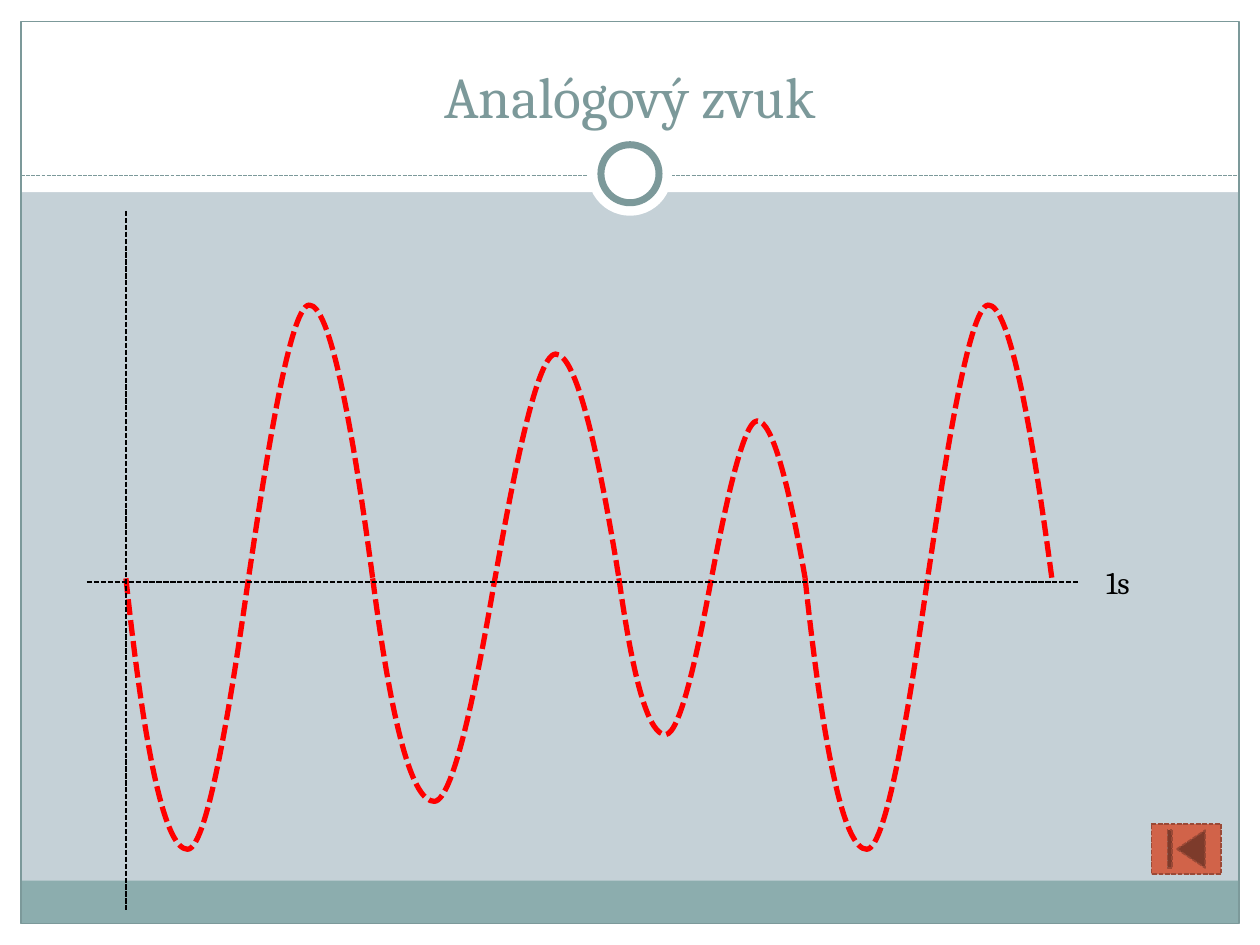
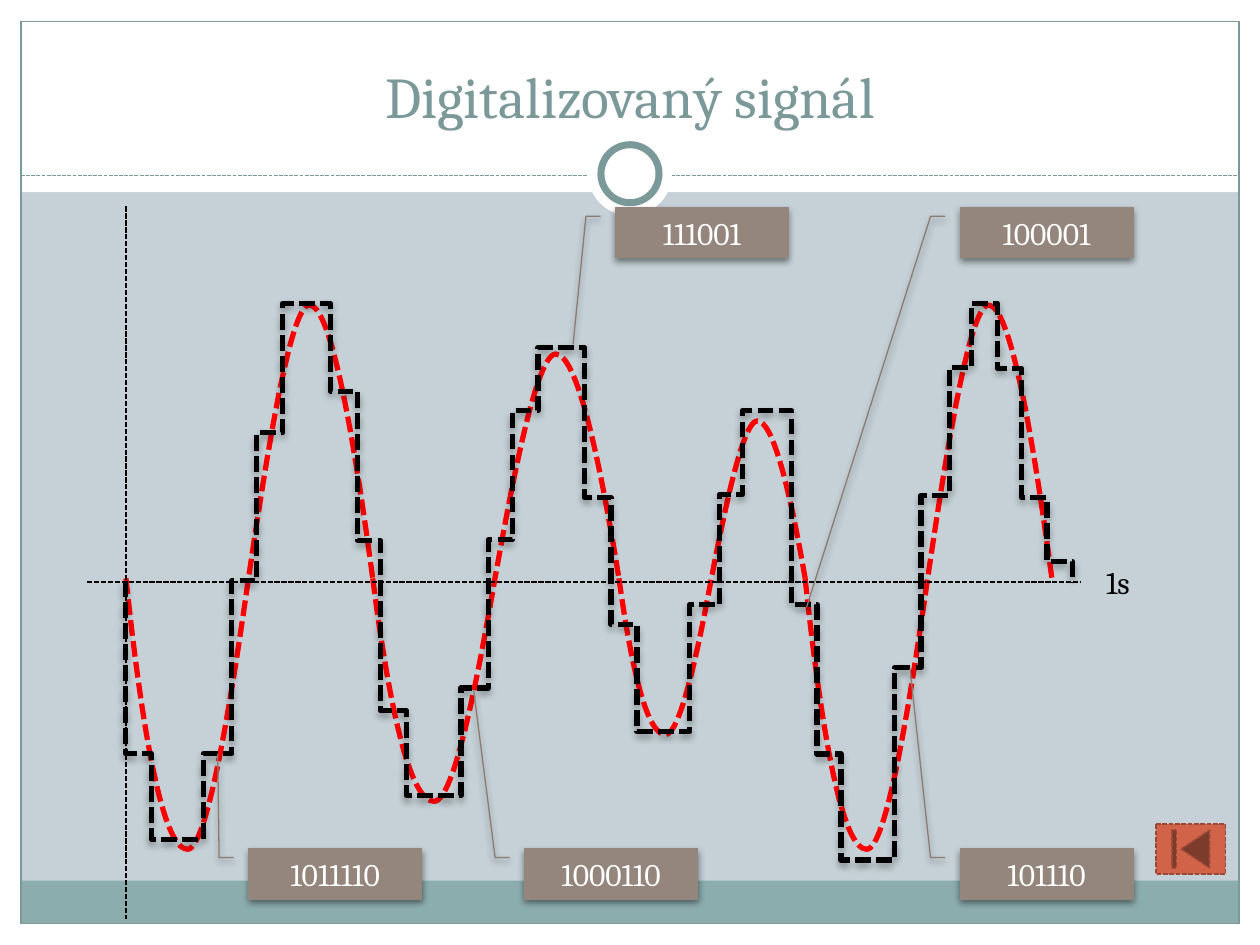
"""Build two slides that compare an analogue sound wave with its digitised signal."""
from lxml.etree import SubElement
from pptx import Presentation
from pptx.dml.color import RGBColor
from pptx.enum.dml import MSO_LINE
from pptx.enum.shapes import MSO_CONNECTOR, MSO_SHAPE
from pptx.enum.text import MSO_ANCHOR, MSO_AUTO_SIZE, PP_ALIGN
from pptx.oxml.ns import qn
from pptx.util import Pt

COLOURS = {
    "backdrop": "C5D1D7", "white": "FFFFFF", "band": "8CADAE", "accent": "7C999A",
    "wave": "FF0000", "black": "000000", "code": "95867D", "leader": "8C7B70",
    "button": "D16349", "button_edge": "9B4936",
}
DASH = MSO_LINE.SQUARE_DOT


def paint(item, fill=None, edge=None, width=0.75, dash=None, shadow=None):
    if hasattr(item, "fill"):
        if fill:
            item.fill.solid()
            item.fill.fore_color.rgb = RGBColor.from_string(COLOURS[fill])
        else:
            item.fill.background()
    if edge:
        item.line.color.rgb = RGBColor.from_string(COLOURS[edge])
        for attribute, value in {"width": Pt(width), "dash_style": dash}.items():
            setattr(item.line, attribute, value)
    else:
        item.line.fill.background()
    properties = item.element.find(qn("p:spPr"))
    effects = SubElement(properties, qn("a:effectLst"))
    if shadow:
        cast = SubElement(effects, qn("a:outerShdw"), blurRad=str(Pt(4)),
                          dist=str(Pt(2)), dir="5400000", rotWithShape="0")
        tint = SubElement(cast, qn("a:srgbClr"), val=COLOURS["black"])
        SubElement(tint, qn("a:alpha"), val=str(shadow * 1000))


def write(frame, words, size, colour, align=PP_ALIGN.CENTER):
    frame.text = words
    paragraph = frame.paragraphs[0]
    paragraph.alignment = align
    font = paragraph.runs[0].font
    font.color.rgb = RGBColor.from_string(COLOURS[colour])
    for attribute, value in {"name": "Cambria", "size": Pt(size)}.items():
        setattr(font, attribute, value)


deck = Presentation()
deck.slide_width, deck.slide_height = Pt(720), Pt(540)
theme = deck.slide_layouts[5]
theme.background.fill.solid()
theme.background.fill.fore_color.rgb = RGBColor.from_string(COLOURS["backdrop"])
heading = theme.placeholders[0]
heading_place = {"left": Pt(24), "top": Pt(18), "width": Pt(672), "height": Pt(60)}
for attribute, value in heading_place.items():
    setattr(heading, attribute, value)
heading.text_frame.vertical_anchor = MSO_ANCHOR.BOTTOM

slides = [deck.slides.add_slide(theme) for _ in range(2)]
drawing = slides[0].shapes
decor = []
for kind, place, look in [
    (MSO_SHAPE.RECTANGLE, (0, 528, 720, 12), {"fill": "white"}),
    (MSO_SHAPE.RECTANGLE, (0, 0, 720, 109.8), {"fill": "white"}),
    (MSO_SHAPE.RECTANGLE, (0, 0, 12, 540), {"fill": "white"}),
    (MSO_SHAPE.RECTANGLE, (708, 0, 12, 540), {"fill": "white"}),
    (MSO_SHAPE.RECTANGLE, (11.75, 503.3, 696, 24.5), {"fill": "band"}),
    (MSO_SHAPE.RECTANGLE, (12, 12.2, 696, 515.5), {"edge": "accent"}),
    (None, (12, 100.5, 708, 100.5), {"edge": "accent", "dash": DASH}),
    (MSO_SHAPE.OVAL, (336, 75.3, 48, 48), {"fill": "white"}),
    (MSO_SHAPE.OVAL, (343.4, 82.7, 33.2, 33.2),
     {"fill": "white", "edge": "accent", "width": 4}),
]:
    corners = [Pt(value) for value in place]
    if kind is None:
        piece = drawing.add_connector(MSO_CONNECTOR.STRAIGHT, *corners)
    else:
        piece = drawing.add_shape(kind, *corners)
    paint(piece, **look)
    decor.append(piece)
for order, piece in enumerate(decor):
    piece.element.xpath(".//p:cNvPr")[0].set("id", str(100 + order))
    theme.shapes.element.insert(2 + order, piece.element)

BASELINE = 330.5
WAVE_FORM = [
    (0.083, 0.71), (0.167, 1), (0.25, 1), (0.333, 1), (0.434, 0.4), (0.495, 0.01),
    (0.553, -0.34), (0.66, -1), (0.743, -1), (0.825, -1), (0.913, -0.59), (1, 0),
]
WAVES = [(72, 141, 154.8, 156.2), (213, 140.7, 127.4, 128.2),
         (353.7, 106.4, 89.3, 90), (460.1, 141, 154.8, 156.2)]
contents = [
    ("Analógový zvuk", (616.3, 120.5, 520), 658),
    ("Digitalizovaný signál", (617.8, 118, 525), 660.5),
]
for slide, (topic, (time_end, axis_top, axis_bottom), _) in zip(slides, contents):
    write(slide.shapes.title.text_frame, topic, 33, "accent")
    grouped = slide is slides[1]

    sound = slide.shapes.add_group_shape().shapes if grouped else slide.shapes
    for start, length, depth, height in WAVES:
        curve = [(Pt(start + length * along),
                  Pt(BASELINE + swing * (depth if swing > 0 else height)))
                 for along, swing in WAVE_FORM]
        builder = sound.build_freeform(Pt(start), Pt(BASELINE))
        builder.add_line_segments(curve, close=False)
        wave = builder.convert_to_shape()
        paint(wave, edge="wave", width=3, dash=DASH)
        outline = wave.element.xpath(".//a:path")[0]
        segments = outline.findall(qn("a:lnTo"))
        for first in range(0, len(segments), 3):
            bend = SubElement(outline, qn("a:cubicBezTo"))
            for segment in segments[first:first + 3]:
                bend.append(segment[0])
                outline.remove(segment)

    axes = slide.shapes.add_group_shape().shapes if grouped else slide.shapes
    for ends in [(49.7, 332.6, time_end, 332.6), (72, axis_top, 72, axis_bottom)]:
        axis = axes.add_connector(MSO_CONNECTOR.STRAIGHT, *[Pt(value) for value in ends])
        paint(axis, edge="black", width=1, dash=DASH)
    second = axes.add_textbox(Pt(625), Pt(318.2), Pt(31), Pt(28.8))
    write(second.text_frame, "1s", 18, "black", PP_ALIGN.LEFT)
    second_fit = {"word_wrap": False, "auto_size": MSO_AUTO_SIZE.SHAPE_TO_FIT_TEXT}
    for attribute, value in second_fit.items():
        setattr(second.text_frame, attribute, value)

SAMPLES = [
    (71.6, 430.6), (86.4, 479.5), (116.3, 430.6), (132.5, 331.9), (146.7, 247.3),
    (161.6, 173.5), (189, 223.6), (204.5, 308.9), (217.4, 406.1), (232.2, 454.7),
    (263.5, 393.1), (279, 308.5), (292.7, 234.7), (307.4, 198.7), (334.1, 284.4),
    (349.2, 356.8), (364, 418), (394.2, 345.3), (411.1, 282.6), (424.1, 234.7),
    (452.5, 345.6), (466.9, 430.9), (480.6, 491.4), (511.2, 381.6), (526.3, 283),
    (542.5, 210.2), (555.1, 173.5), (570.2, 210.6), (583.9, 284.4), (598.3, 320.8),
    (612.7, 332.6),
]
stairs = []
level = 331.9
for moment, next_level in SAMPLES:
    stairs += [(Pt(moment), Pt(level)), (Pt(moment), Pt(next_level))]
    level = next_level
builder = slides[1].shapes.build_freeform(*stairs[0])
builder.add_line_segments(stairs[1:], close=False)
paint(builder.convert_to_shape(), edge="black", width=3, dash=DASH, shadow=35)

for code, left, top, reach_down, reach_across in [
    ("1011110", 141.8, 484.5, -1.827, -0.175),
    ("1000110", 299.5, 484.5, -3.07, -0.291),
    ("101110", 548.3, 484.5, -3.479, -0.285),
    ("100001", 548.3, 118.1, 7.752, -0.879),
    ("111001", 351.4, 118.1, 2.666, -0.241),
]:
    sample = slides[1].shapes.add_shape(MSO_SHAPE.LINE_CALLOUT_2_NO_BORDER,
                                        Pt(left), Pt(top), Pt(99.4), Pt(29.5))
    leader = [0.188, -0.083, 0.188, -0.167, reach_down, reach_across]
    for position, value in enumerate(leader):
        sample.adjustments[position] = value
    paint(sample, fill="code", edge="leader", shadow=45)
    write(sample.text_frame, code, 18, "white")
    sample.text_frame.vertical_anchor = MSO_ANCHOR.MIDDLE

for slide, (_, _, button_left) in zip(slides, contents):
    rewind = slide.shapes.add_shape(MSO_SHAPE.ACTION_BUTTON_BEGINNING,
                                    Pt(button_left), Pt(470.8), Pt(39.8), Pt(28.8))
    paint(rewind, fill="button", edge="button_edge", width=0.9, dash=DASH)

deck.save("out.pptx")
